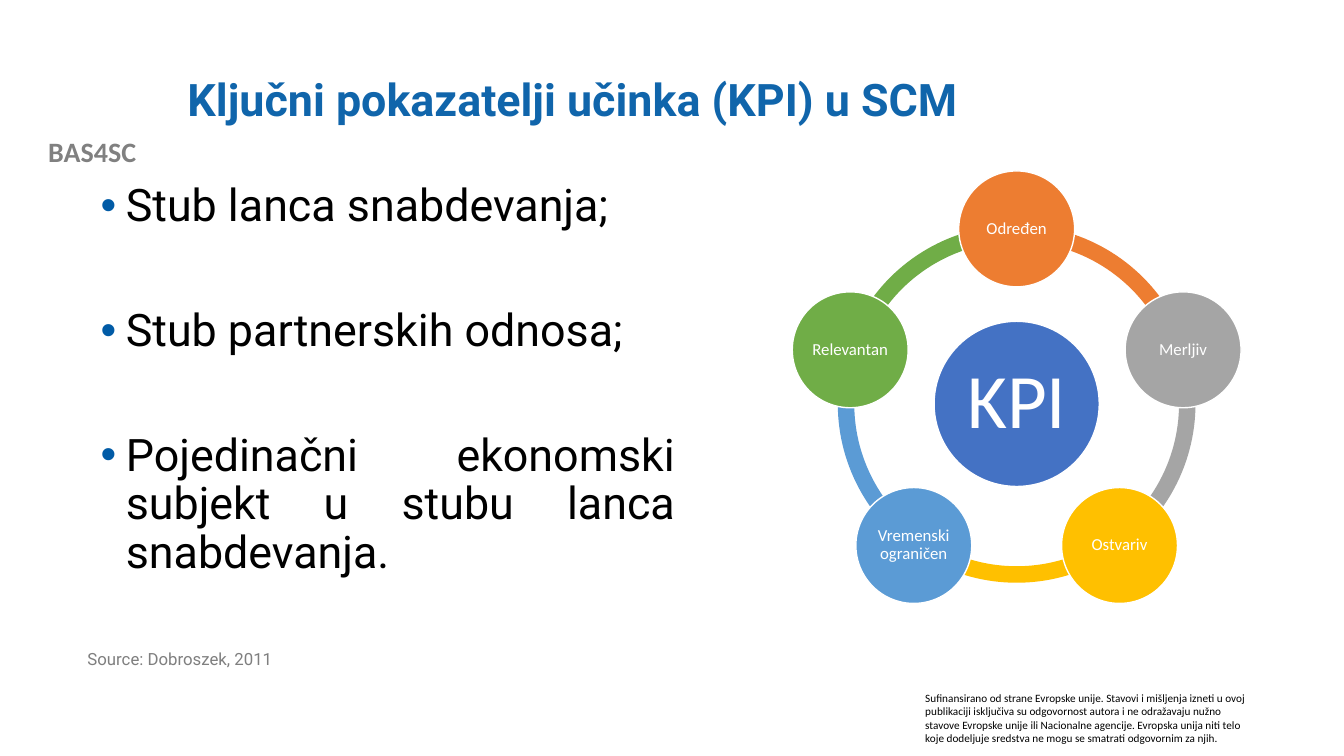
from math import cos, radians, sin

from lxml import etree
from pptx import Presentation
from pptx.dml.color import RGBColor
from pptx.enum.shapes import MSO_SHAPE
from pptx.enum.text import MSO_ANCHOR, MSO_AUTO_SIZE, PP_ALIGN
from pptx.oxml.ns import qn
from pptx.util import Pt

OVAL, ARC = MSO_SHAPE.OVAL, MSO_SHAPE.BLOCK_ARC
LEFT, CENTER, JUSTIFY = PP_ALIGN.LEFT, PP_ALIGN.CENTER, PP_ALIGN.JUSTIFY
TOP, MIDDLE = MSO_ANCHOR.TOP, MSO_ANCHOR.MIDDLE
NO_AUTOFIT = MSO_AUTO_SIZE.NONE

COLORS = {
    "title": "1065AB", "bullet": "015BA6", "black": "000000", "white": "FFFFFF",
    "gray": "808080", "source": "7F7F7F", "hub": "4472C4", "orange": "ED7D31",
    "silver": "A5A5A5", "gold": "FFC000", "sky": "5B9BD5", "green": "70AD47",
}
CRITERIA = [
    ("Određen", "orange"), ("Merljiv", "silver"), ("Ostvariv", "gold"),
    ("Vremenski ograničen", "sky"), ("Relevantan", "green"),
]
PILLARS = [
    "Stub lanca snabdevanja;",
    "Stub partnerskih odnosa;",
    "Pojedinačni ekonomski subjekt u stubu lanca snabdevanja.",
]
DISCLAIMER = (
    "Sufinansirano od strane Evropske unije. Stavovi i mišljenja izneti u ovoj "
    "publikaciji isključiva su odgovornost autora i ne odražavaju nužno stavove "
    "Evropske unije ili Nacionalne agencije. Evropska unija niti telo koje dodeljuje "
    "sredstva ne mogu se smatrati odgovornim za njih."
)
CENTER_X, CENTER_Y, ORBIT = 726.2, 288.5, 125
RING_SIZE, HUB_SIZE, NODE_SIZE = 255.5, 118, 82.8


class SlideBuilder:
    def __init__(self, prs):
        self.slide = prs.slides.add_slide(prs.slide_layouts[5])

    def color(self, name):
        return RGBColor.from_string(COLORS[name])

    def fill_text(self, tf, texts, color, size, font="Roboto", bold=False, align=LEFT,
                  anchor=TOP, spacing=0.9, gap=0, bullet=None):
        frame = {"word_wrap": True, "auto_size": NO_AUTOFIT, "vertical_anchor": anchor}
        for name, value in frame.items():
            setattr(tf, name, value)
        for i, text in enumerate(texts):
            p = tf.paragraphs[0] if i == 0 else tf.add_paragraph()
            layout = {"alignment": align, "line_spacing": spacing,
                      "space_before": Pt(gap if i else 0)}
            for name, value in layout.items():
                setattr(p, name, value)
            if bullet:
                self.add_bullet(p, bullet)
            r = p.add_run()
            r.text = text
            for name, value in {"name": font, "size": Pt(size), "bold": bold}.items():
                setattr(r.font, name, value)
            r.font.color.rgb = self.color(color)

    def add_bullet(self, p, color):
        pPr = p._p.get_or_add_pPr()
        pPr.set("marL", str(Pt(18)))
        pPr.set("indent", str(-Pt(18)))
        bu_color = etree.SubElement(pPr, qn("a:buClr"))
        etree.SubElement(bu_color, qn("a:srgbClr"), val=COLORS[color])
        etree.SubElement(pPr, qn("a:buFont"), typeface="Arial")
        etree.SubElement(pPr, qn("a:buChar"), char="•")

    def title(self, box, text, **style):
        s = self.slide.shapes.title
        for name, value in zip(("left", "top", "width", "height"), box):
            setattr(s, name, Pt(value))
        self.fill_text(s.text_frame, [text], anchor=MIDDLE, **style)

    def text(self, box, texts, **style):
        s = self.slide.shapes.add_textbox(*map(Pt, box))
        self.fill_text(s.text_frame, texts, **style)

    def centered(self, kind, x, y, size, fill):
        """Add a square-framed shape around the point (x, y)."""
        s = self.slide.shapes.add_shape(
            kind, Pt(x - size / 2), Pt(y - size / 2), Pt(size), Pt(size))
        s.shadow.inherit = False
        s.fill.solid()
        s.fill.fore_color.rgb = self.color(fill)
        s.line.fill.background()
        return s

    def arc(self, start, end, fill):
        s = self.centered(ARC, CENTER_X, CENTER_Y, RING_SIZE, fill)
        # Adjustments count 60000ths of a degree in units of 100000.
        for i, value in enumerate((start * 0.6, end * 0.6, 0.046)):
            s.adjustments[i] = value

    def circle(self, x, y, size, fill, text, font_size):
        s = self.centered(OVAL, x, y, size, fill)
        s.line.color.rgb = self.color("white")
        s.line.width = Pt(1)
        tf = s.text_frame
        for side in ("left", "top", "right", "bottom"):
            setattr(tf, f"margin_{side}", Pt(1.4))
        self.fill_text(tf, [text], "white", font_size, font="Calibri",
                       align=CENTER, anchor=MIDDLE)


def main():
    prs = Presentation()
    prs.slide_width, prs.slide_height = Pt(960), Pt(540)
    b = SlideBuilder(prs)
    b.text((0, 92.2, 131.8, 31.7), ["BAS4SC"], color="gray", size=20,
           font="Calibri", bold=True, align=CENTER, spacing=1)
    b.text((653.8, 490.3, 246.2, 46), [DISCLAIMER], color="black", size=8,
           font="Calibri", spacing=1)
    b.title((126.7, 28.8, 767.5, 87.8), "Ključni pokazatelji učinka (KPI) u SCM",
            color="title", size=32, bold=True)
    b.text((64.8, 127.4, 424.8, 342.7), PILLARS, color="black", size=32,
           align=JUSTIFY, gap=54.5, bullet="bullet")
    b.text((55.4, 461.5, 360.7, 37.4), ["Source: Dobroszek, 2011"],
           color="source", size=12)

    step = 360 / len(CRITERIA)
    angles = [(270 + i * step) % 360 for i in range(len(CRITERIA))]
    for angle, (_, fill) in zip(angles, CRITERIA):
        b.arc(angle, (angle + step) % 360, fill)
    b.circle(CENTER_X, CENTER_Y, HUB_SIZE, "hub", "KPI", 55)
    for angle, (label, fill) in zip(angles, CRITERIA):
        x = CENTER_X + ORBIT * cos(radians(angle))
        y = CENTER_Y + ORBIT * sin(radians(angle))
        b.circle(x, y, NODE_SIZE, fill, label, 12)
    prs.save("out.pptx")


if __name__ == "__main__":
    main()
